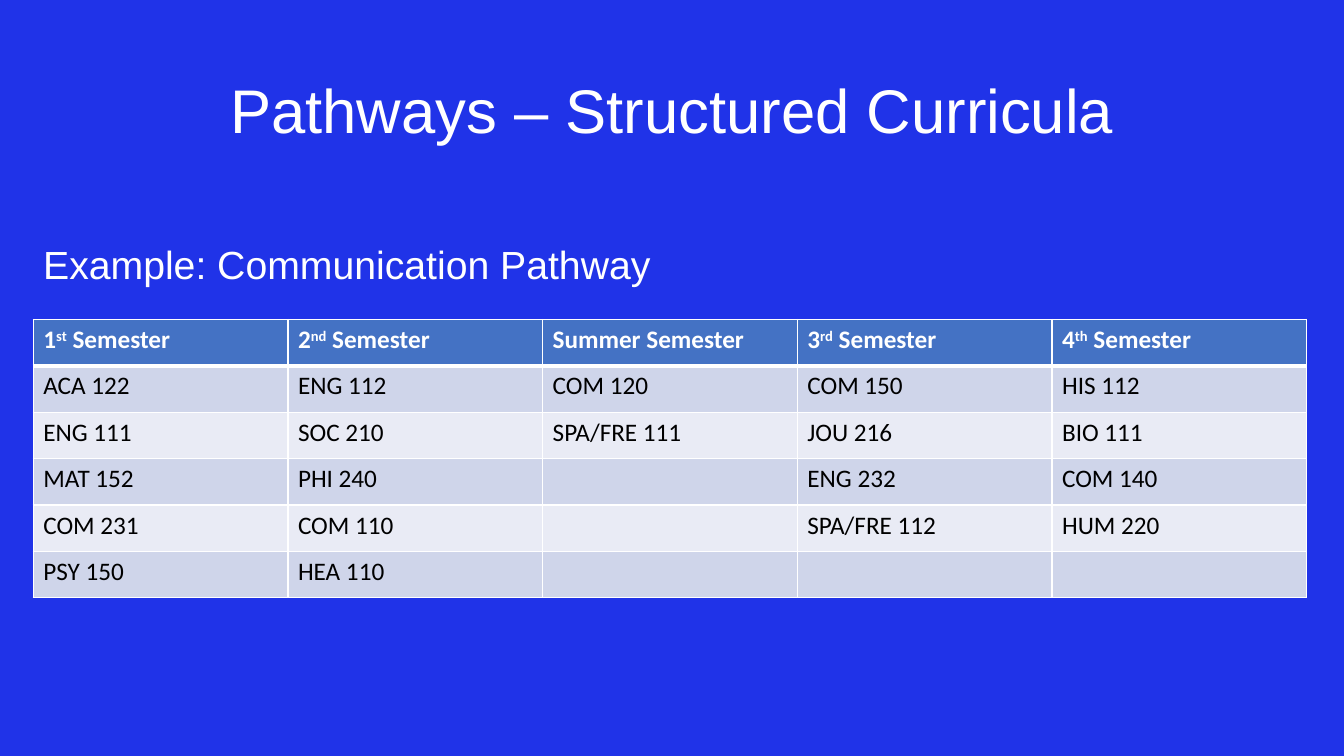
"""Build the slide showing the semester plan of the Communication Pathway."""
from dataclasses import dataclass

from lxml import etree
from pptx import Presentation
from pptx.dml.color import RGBColor
from pptx.enum.text import MSO_ANCHOR, MSO_AUTO_SIZE, PP_ALIGN
from pptx.oxml.ns import qn
from pptx.util import Emu, Pt

CENTER, LEFT = PP_ALIGN.CENTER, PP_ALIGN.LEFT
MIDDLE, TOP = MSO_ANCHOR.MIDDLE, MSO_ANCHOR.TOP
NO_AUTOFIT = MSO_AUTO_SIZE.NONE
EMU_PER_PX = 9144
TITLE_ONLY = 5
COLORS = {
    "background": "2033E8",
    "white": "FFFFFF",
    "black": "000000",
    "header": "4472C4",
    "odd_row": "CFD5EA",
    "even_row": "E9EBF5",
}


@dataclass(frozen=True)
class Box:
    """Place and size in px."""
    left: int
    top: int
    width: int
    height: int

    def emu(self) -> tuple[Emu, ...]:
        """Return left, top, width and height in EMU."""
        return tuple(px(n) for n in (self.left, self.top, self.width, self.height))


@dataclass(frozen=True)
class Semester:
    """One column of the plan; the ordinal suffix is raised."""
    number: str
    suffix: str
    label: str
    courses: tuple[str, ...]


SEMESTERS = (
    Semester("1", "st", " Semester", ("ACA 122", "ENG 111", "MAT 152", "COM 231", "PSY 150")),
    Semester("2", "nd", " Semester", ("ENG 112", "SOC 210", "PHI 240", "COM 110", "HEA 110")),
    Semester("", "", "Summer Semester", ("COM 120", "SPA/FRE 111")),
    Semester("3", "rd", " Semester", ("COM 150", "JOU 216", "ENG 232", "SPA/FRE 112")),
    Semester("4", "th", " Semester", ("HIS 112", "BIO 111", "COM 140", "HUM 220")),
)
TITLE_BOX = Box(92, 40, 1150, 145)
EXAMPLE_BOX = Box(33, 239, 825, 56)
PLAN_BOX = Box(33, 317, 1263, 276)


def px(length: int) -> Emu:
    """Convert px to EMU."""
    return Emu(length * EMU_PER_PX)


def rgb(name: str) -> RGBColor:
    """Look up a named colour."""
    return RGBColor.from_string(COLORS[name])


def style_run(run, font: str, size: int, color: str, bold: bool = False) -> None:
    """Set the font of a run."""
    run.font.name = font
    run.font.size = Pt(size)
    run.font.bold = bold
    run.font.color.rgb = rgb(color)


def write_heading(shape, box: Box, text: str, size: int, align, anchor, before: int) -> None:
    """Place a heading and format its text."""
    shape.left, shape.top, shape.width, shape.height = box.emu()
    frame = shape.text_frame
    frame.text = text
    frame.word_wrap = True
    frame.auto_size = NO_AUTOFIT
    frame.vertical_anchor = anchor
    paragraph = frame.paragraphs[0]
    paragraph.alignment = align
    paragraph.line_spacing = 0.9
    paragraph.space_before = Pt(before)
    style_run(paragraph.runs[0], "Arial", size, "white")


def style_cell(cell, row: int) -> None:
    """Draw the borders and fill of a cell; a thick rule closes the header."""
    properties = cell._tc.get_or_add_tcPr()
    widths = {"lnL": 1, "lnR": 1, "lnT": 3 if row == 1 else 1, "lnB": 3 if row == 0 else 1}
    for side, width in widths.items():
        line = etree.SubElement(properties, qn(f"a:{side}"), w=str(Pt(width)))
        fill = etree.SubElement(line, qn("a:solidFill"))
        etree.SubElement(fill, qn("a:srgbClr"), val=COLORS["white"])
    cell.fill.solid()
    band = "header" if row == 0 else ("odd_row" if row % 2 else "even_row")
    cell.fill.fore_color.rgb = rgb(band)


def write_semester(cell, semester: Semester) -> None:
    """Write a column header with its raised suffix."""
    paragraph = cell.text_frame.paragraphs[0]
    for part in filter(None, (semester.number, semester.suffix, semester.label)):
        run = paragraph.add_run()
        run.text = part
        style_run(run, "Calibri", 18, "white", bold=True)
        if part == semester.suffix:
            run.font._element.set("baseline", "30000")


def add_plan(slide) -> None:
    """Add the table of semesters and courses."""
    row_count = 1 + max(len(semester.courses) for semester in SEMESTERS)
    plan = slide.shapes.add_table(row_count, len(SEMESTERS), *PLAN_BOX.emu()).table
    for column, semester in enumerate(SEMESTERS):
        for row in range(row_count):
            style_cell(plan.cell(row, column), row)
        write_semester(plan.cell(0, column), semester)
        for row, course in enumerate(semester.courses, start=1):
            cell = plan.cell(row, column)
            cell.text_frame.text = course
            style_run(cell.text_frame.paragraphs[0].runs[0], "Calibri", 18, "black")


def main() -> None:
    """Build and save the slide."""
    deck = Presentation()
    deck.slide_width, deck.slide_height = px(1333), px(750)
    slide = deck.slides.add_slide(deck.slide_layouts[TITLE_ONLY])
    slide.background.fill.solid()
    slide.background.fill.fore_color.rgb = rgb("background")
    write_heading(slide.shapes.title, TITLE_BOX, "Pathways – Structured Curricula",
                  44, CENTER, MIDDLE, 0)
    example = slide.shapes.add_textbox(*EXAMPLE_BOX.emu())
    write_heading(example, EXAMPLE_BOX, "Example: Communication Pathway", 28, LEFT, TOP, 10)
    add_plan(slide)
    deck.save("out.pptx")


if __name__ == "__main__":
    main()
